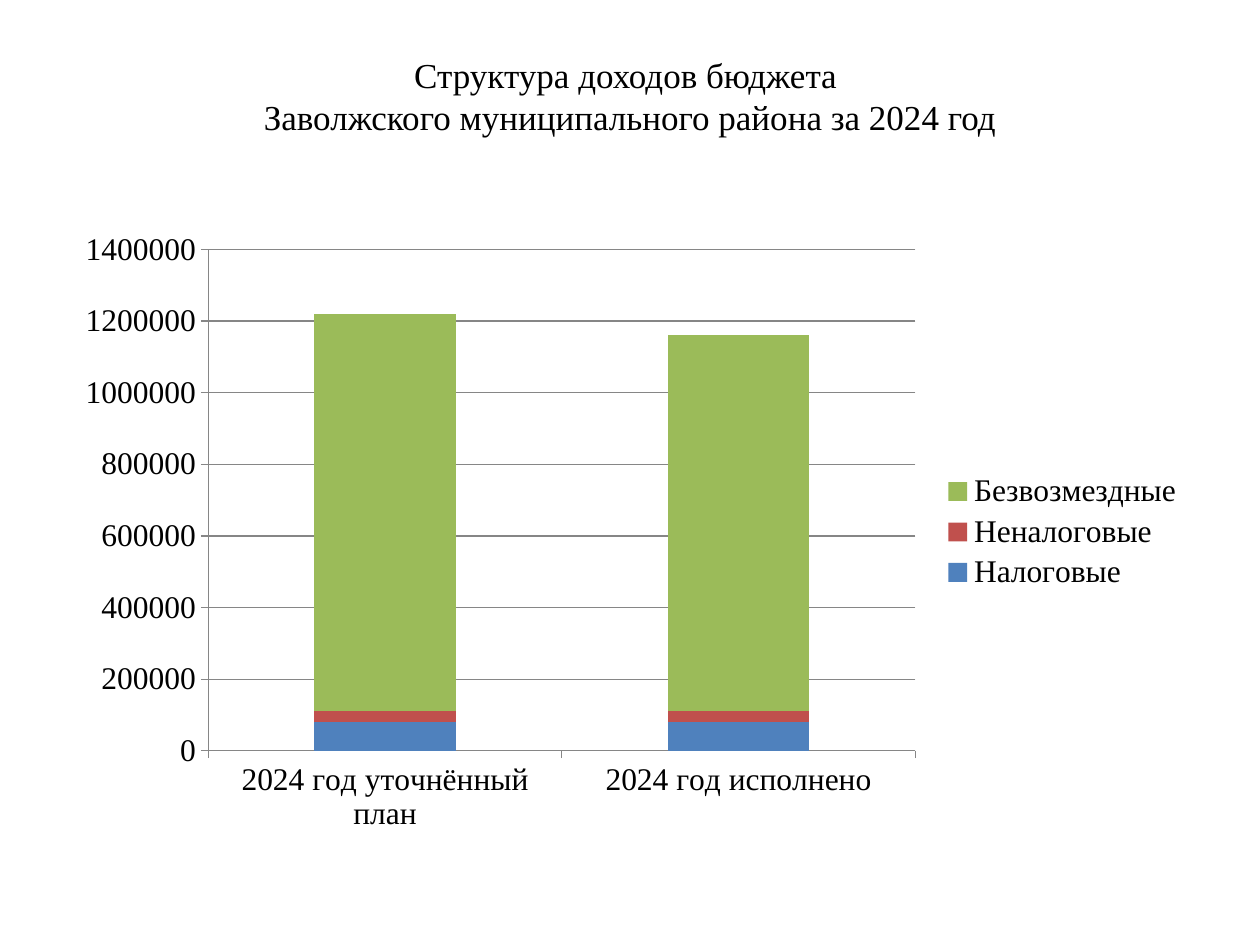
from pptx import Presentation
from pptx.chart.data import CategoryChartData
from pptx.dml.color import RGBColor
from pptx.enum.chart import XL_CHART_TYPE, XL_LEGEND_POSITION, XL_TICK_MARK
from pptx.enum.text import MSO_ANCHOR, PP_ALIGN
from pptx.util import Emu, Pt

STACKED = XL_CHART_TYPE.COLUMN_STACKED
RIGHT = XL_LEGEND_POSITION.RIGHT
OUTSIDE = XL_TICK_MARK.OUTSIDE
MIDDLE = MSO_ANCHOR.MIDDLE
CENTER = PP_ALIGN.CENTER

TITLE = ["Структура доходов бюджета ", "Заволжского муниципального района за 2024 год"]
CATEGORIES = ["2024 год уточнённый план", "2024 год исполнено"]
SERIES = [
    ("Налоговые", (80000, 80000), "blue"),
    ("Неналоговые", (30000, 30000), "red"),
    ("Безвозмездные", (1110000, 1050000), "green"),
]
COLORS = {"text": "000000", "line": "868686", "blue": "4F81BD",
          "red": "C0504D", "green": "9BBB59"}
FONT = "Times New Roman"
PX = 914400 // 126
SLIDE = (1260, 945)
TITLE_BOX = (0, 16, 1260, 158)
CHART_BOX = (63, 220, 1134, 624)


def px(*lengths):
    return [Emu(n * PX) for n in lengths]


def rgb(name):
    return RGBColor.from_string(COLORS[name])


def style_font(font, size):
    font.name = FONT
    font.size = Pt(size)
    font.color.rgb = rgb("text")


def style_line(line):
    line.color.rgb = rgb("line")
    line.width = Pt(0.75)


def add_title(s):
    sp = s.shapes.title
    sp.left, sp.top, sp.width, sp.height = px(*TITLE_BOX)
    tf = sp.text_frame
    tf.word_wrap = True
    tf.vertical_anchor = MIDDLE
    p = tf.paragraphs[0]
    p.alignment = CENTER
    for i, text in enumerate(TITLE):
        if i:
            p.add_line_break()
        r = p.add_run()
        r.text = text
        style_font(r.font, 20)


def add_income_chart(s):
    data = CategoryChartData(number_format="General")
    data.categories = CATEGORIES
    for name, values, _ in SERIES:
        data.add_series(name, values)
    chart = s.shapes.add_chart(STACKED, *px(*CHART_BOX), data).chart
    style_font(chart.font, 18)
    chart.has_title = False
    chart.has_legend = True
    chart.legend.position = RIGHT
    chart.legend.include_in_layout = False

    plot = chart.plots[0]
    plot.gap_width = 150
    plot.overlap = 100
    plot.vary_by_categories = False
    for series, (_, _, color) in zip(plot.series, SERIES):
        series.format.fill.solid()
        series.format.fill.fore_color.rgb = rgb(color)

    for axis in (chart.category_axis, chart.value_axis):
        axis.major_tick_mark = OUTSIDE
        style_line(axis.format.line)
    chart.value_axis.has_major_gridlines = True
    style_line(chart.value_axis.major_gridlines.format.line)


def main():
    prs = Presentation()
    prs.slide_width, prs.slide_height = px(*SLIDE)
    s = prs.slides.add_slide(prs.slide_layouts[5])
    add_title(s)
    add_income_chart(s)
    prs.save("out.pptx")


if __name__ == "__main__":
    main()
